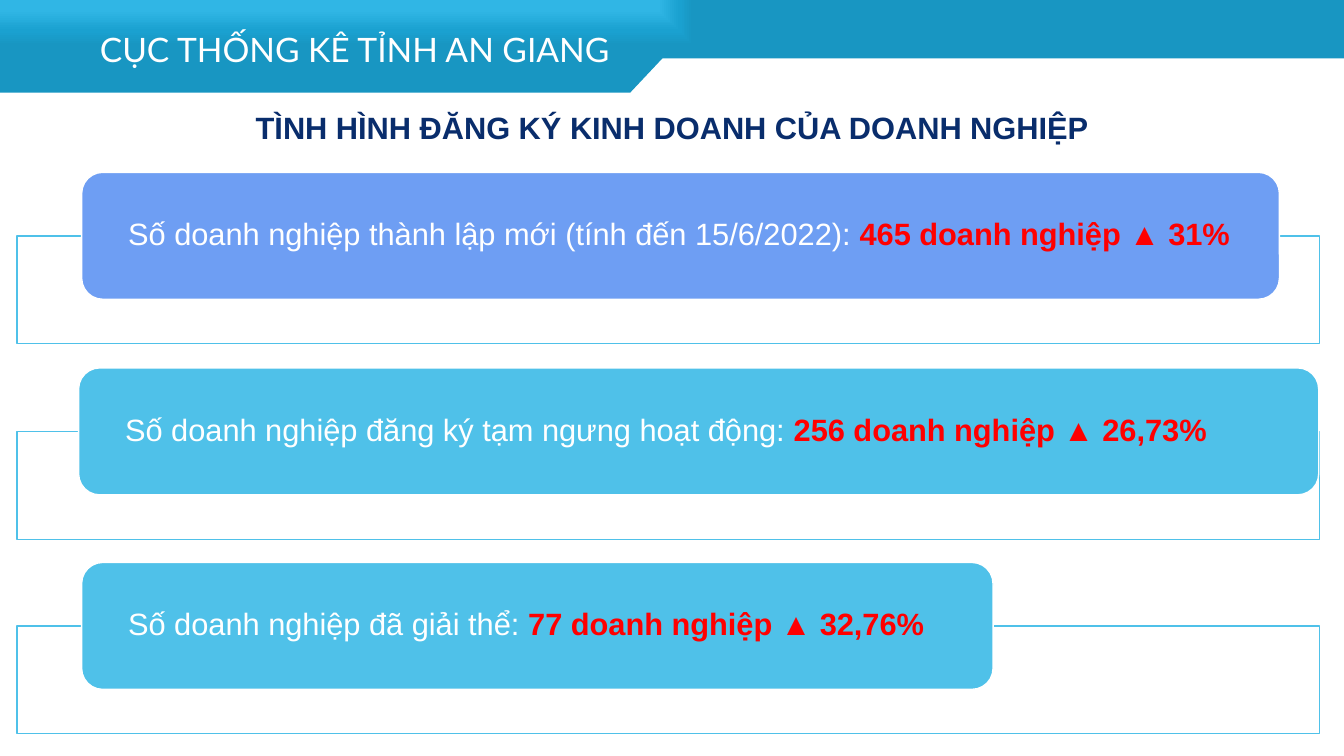
from pptx import Presentation
from pptx import util as u
from pptx.dml import color
from pptx.enum import shapes, text
from pptx.oxml import parse_xml
from pptx.oxml.ns import nsdecls, qn

PX = 9144
STOPS = [(0, "30B6E5"), (23, "30B6E5"), (69, "1AA1D0"), (97, "1896C2")]
BANNER = [(0, 92), (625, 92), (657, 58), (1417, 58), (1417, -1), (0, -1)]
CARDS = [
    (81, 1188, "6E9EF3", "Số doanh nghiệp thành lập mới (tính đến 15/6/2022): ", "465 doanh nghiệp ▲ 31%"),
    (78, 1230, "4FC1E9", "Số doanh nghiệp đăng ký tạm ngưng hoạt động: ", "256 doanh nghiệp ▲ 26,73%"),
    (81, 904, "4FC1E9", "Số doanh nghiệp đã giải thể: ", "77 doanh nghiệp ▲ 32,76%"),
]


def rgb(value):
    return color.RGBColor.from_string(value)


class Deck:
    """Slide builder holding the style and the current slide."""

    font, size, white, line, accent = "Arial", 22, "FFFFFF", "4FC1E9", "FF0000"

    def __init__(self):
        self.prs = Presentation()
        self.prs.slide_width, self.prs.slide_height = u.Inches(13.33), u.Inches(7.5)
        self.s = self.prs.slides.add_slide(self.prs.slide_layouts[5])

    def style(self, r, fill, size=size, font=font, bold=False):
        r.font.size, r.font.name, r.font.bold = u.Pt(size), font, bold
        r.font.color.rgb = rgb(fill)

    def frame(self, sp, inset=0, anchor=text.MSO_ANCHOR.TOP):
        tf = sp.text_frame
        tf.word_wrap, tf.auto_size = True, text.MSO_AUTO_SIZE.NONE
        tf.margin_left = tf.margin_right = inset * PX
        tf.margin_top = tf.margin_bottom = 0
        tf.vertical_anchor = anchor
        return tf

    def banner(self, points, stops):
        fb = self.s.shapes.build_freeform(*points[0], scale=PX)
        fb.add_line_segments(points[1:], close=True)
        sp = fb.convert_to_shape()
        sp.shadow.inherit = False
        sp.line.fill.background()
        gs = "".join(f'<a:gs pos="{pos * 1000}"><a:srgbClr val="{c}"/></a:gs>' for pos, c in stops)
        grad = parse_xml(
            f'<a:gradFill {nsdecls("a")} rotWithShape="1"><a:gsLst>{gs}</a:gsLst>'
            '<a:path path="rect"><a:fillToRect r="100000" b="100000"/></a:path></a:gradFill>')
        sp._element.spPr.find(qn("a:custGeom")).addnext(grad)

    def label(self, x, y, w, h, words, size, font):
        sp = self.s.shapes.add_textbox(x * PX, y * PX, w * PX, h * PX)
        tf = self.frame(sp)
        tf.text = words
        self.style(tf.paragraphs[0].runs[0], self.white, size, font)

    def title(self, x, y, w, h, words, fill):
        sp = self.s.shapes.title
        sp.left, sp.top, sp.width, sp.height = (v * PX for v in (x, y, w, h))
        tf = self.frame(sp)
        tf.text = words
        p = tf.paragraphs[0]
        p.alignment = text.PP_ALIGN.CENTER
        self.style(p.runs[0], fill, bold=True)

    def box(self, kind, x, y, w, h, fill, line):
        sp = self.s.shapes.add_shape(kind, x * PX, y * PX, w * PX, h * PX)
        sp.shadow.inherit = False
        sp.fill.solid()
        sp.fill.fore_color.rgb = rgb(fill)
        sp.line.color.rgb, sp.line.width = rgb(line), u.Pt(1)
        return sp

    def card(self, x, y, w, fill, words, figure):
        back = self.box(shapes.MSO_SHAPE.RECTANGLE, 17, y + 63, 1292, 107, self.white, self.line)
        clr = back._element.spPr.find(qn("a:solidFill"))[0]
        clr.append(parse_xml(f'<a:alpha {nsdecls("a")} val="90000"/>'))
        sp = self.box(shapes.MSO_SHAPE.ROUNDED_RECTANGLE, x, y, w, 126, fill, self.white)
        tf = self.frame(sp, 40, text.MSO_ANCHOR.MIDDLE)
        tf.text = words
        p = tf.paragraphs[0]
        p.alignment, p.line_spacing = text.PP_ALIGN.LEFT, 0.9
        self.style(p.runs[0], self.white)
        r = p.add_run()
        r.text = figure
        self.style(r, self.accent, bold=True)


def main():
    deck = Deck()
    deck.banner(BANNER, STOPS)
    deck.label(99, 29, 559, 40, "CỤC THỐNG KÊ TỈNH AN GIANG", 24, "Lato")
    deck.title(192, 108, 949, 37, "TÌNH HÌNH ĐĂNG KÝ KINH DOANH CỦA DOANH NGHIỆP", "092D6C")
    for i, (x, w, fill, words, figure) in enumerate(CARDS):
        deck.card(x, 171 + round(193.5 * i), w, fill, words, figure)
    deck.prs.save("out.pptx")


if __name__ == "__main__":
    main()
